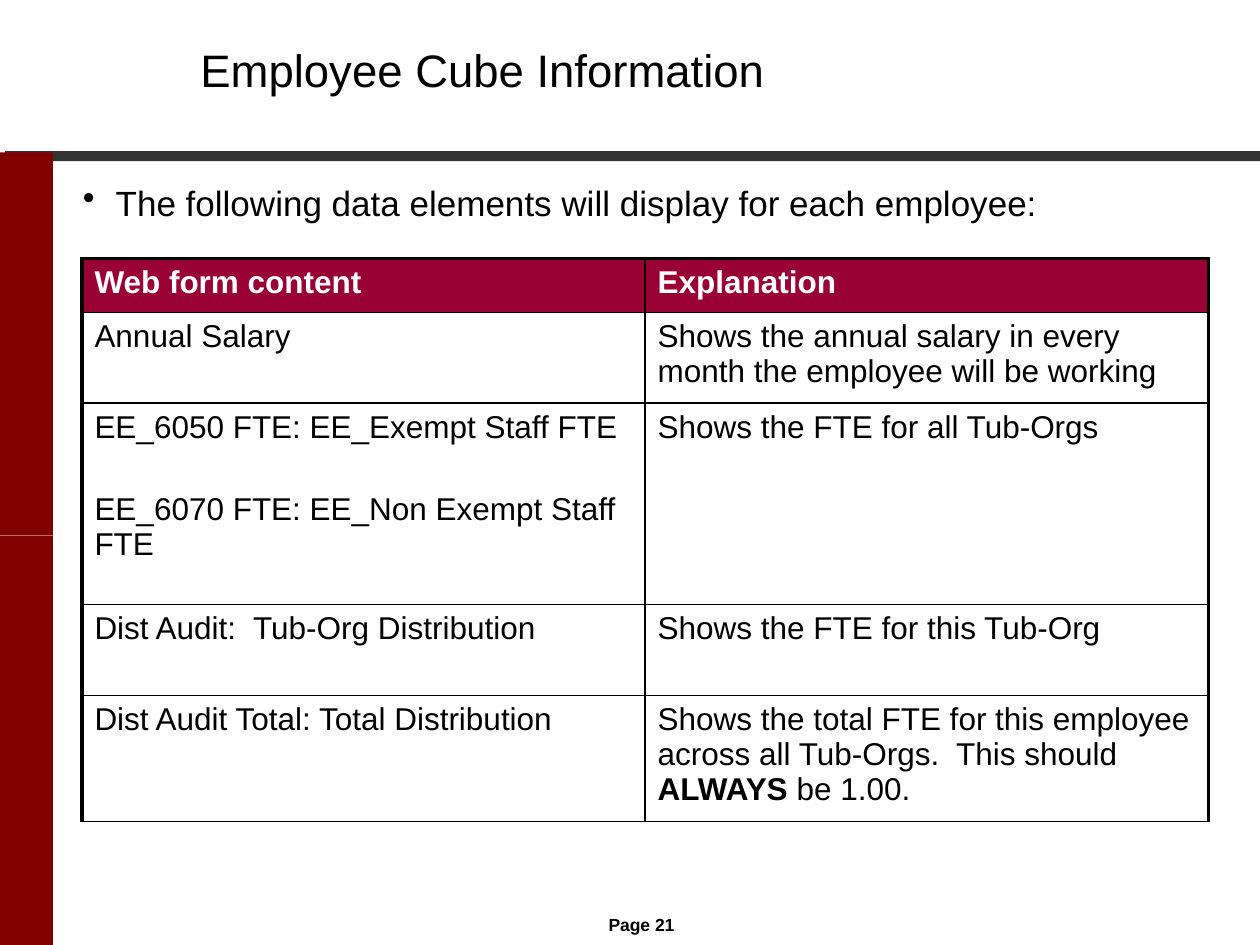
from lxml import etree
from pptx import Presentation
from pptx.dml.color import RGBColor
from pptx.enum.shapes import MSO_SHAPE
from pptx.enum.text import MSO_ANCHOR, MSO_AUTO_SIZE, PP_ALIGN
from pptx.oxml.ns import qn
from pptx.util import Inches, Pt

RECT = MSO_SHAPE.RECTANGLE
MIDDLE = MSO_ANCHOR.MIDDLE
NO_FIT = MSO_AUTO_SIZE.NONE
LEFT = PP_ALIGN.LEFT
FONT = "Arial"
COLORS = {
    "text": "000000",
    "header_text": "FFFFFF",
    "header": "990033",
    "rule": "333333",
    "sidebar": "800000",
    "border": "000000",
}
OUTER, INNER = 2.25, 1
COLUMN_WIDTH = 4.47
ROW_HEIGHTS = [0.43, 0.72, 1.6, 0.72, 0.94]
PARAGRAPH_GAP = 27
ROWS = [
    ("Web form content", "Explanation"),
    ("Annual Salary",
     "Shows the annual salary in every month the employee will be working"),
    ("EE_6050 FTE: EE_Exempt Staff FTE\nEE_6070 FTE: EE_Non Exempt Staff FTE",
     "Shows the FTE for all Tub-Orgs"),
    ("Dist Audit:  Tub-Org Distribution", "Shows the FTE for this Tub-Org"),
    ("Dist Audit Total: Total Distribution",
     "Shows the total FTE for this employee across all Tub-Orgs.  "
     "This should **ALWAYS** be 1.00."),
]


def color(name):
    """Return the named colour."""
    return RGBColor.from_string(COLORS[name])


def add_run(p, text, size, name="text", bold=False):
    """Append a formatted run to a paragraph."""
    r = p.add_run()
    r.text = text
    r.font.name = FONT
    r.font.size = Pt(size)
    r.font.bold = bold
    r.font.color.rgb = color(name)


def add_title(s, text):
    """Place and format the title placeholder."""
    sp = s.shapes.title
    sp.left, sp.top = Inches(1.49), Inches(0)
    sp.width, sp.height = Inches(8.42), Inches(1.14)
    tf = sp.text_frame
    tf.auto_size = NO_FIT
    tf.vertical_anchor = MIDDLE
    p = tf.paragraphs[0]
    p.alignment = LEFT
    p.line_spacing = Pt(28)
    add_run(p, text, 26)


def add_bar(s, left, top, width, height, name):
    """Add a plain filled rectangle."""
    sp = s.shapes.add_shape(RECT, Inches(left), Inches(top), Inches(width), Inches(height))
    sp.shadow.inherit = False
    sp.fill.solid()
    sp.fill.fore_color.rgb = color(name)
    sp.line.fill.background()


def add_text_box(s, left, top, width, height):
    """Add a wrapping text box and return its text frame."""
    tf = s.shapes.add_textbox(
        Inches(left), Inches(top), Inches(width), Inches(height)).text_frame
    tf.word_wrap = True
    return tf


def add_bullet(s, text):
    """Add the bulleted lead-in line."""
    p = add_text_box(s, 0.56, 1.39, 9.21, 0.66).paragraphs[0]
    pPr = p._p.get_or_add_pPr()
    pPr.set("marL", str(Inches(0.26)))
    pPr.set("indent", str(-Inches(0.26)))
    etree.SubElement(pPr, qn("a:buChar"), char="•")
    add_run(p, text, 20)


def add_page_number(s, text):
    """Add the page label at the foot of the slide."""
    tf = add_text_box(s, 4.83, 7.22, 0.8, 0.2)
    tf.margin_left = tf.margin_right = tf.margin_top = tf.margin_bottom = 0
    p = tf.paragraphs[0]
    p.line_spacing = 1.2
    add_run(p, text, 10, bold=True)


def set_borders(cell, widths):
    """Draw the left, right, top and bottom borders of a cell."""
    tcPr = cell._tc.get_or_add_tcPr()
    for i, (side, width) in enumerate(zip("LRTB", widths)):
        ln = etree.Element(qn(f"a:ln{side}"), w=str(Pt(width)))
        fill = etree.SubElement(ln, qn("a:solidFill"))
        etree.SubElement(fill, qn("a:srgbClr"), val=COLORS["border"])
        tcPr.insert(i, ln)


def fill_cell(cell, text, header):
    """Write a cell, with bold text between double asterisks."""
    name = "header_text" if header else "text"
    tf = cell.text_frame
    for i, line in enumerate(text.split("\n")):
        p = tf.add_paragraph() if i else tf.paragraphs[0]
        if i:
            p.space_before = Pt(PARAGRAPH_GAP)
        for j, part in enumerate(line.split("**")):
            add_run(p, part, 18, name, header or j % 2 == 1)
    if header:
        cell.fill.solid()
        cell.fill.fore_color.rgb = color("header")
    else:
        cell.fill.background()


def add_data_table(s):
    """Add the table of data elements."""
    table = s.shapes.add_table(
        len(ROWS), 2, Inches(0.65), Inches(2.05),
        Inches(2 * COLUMN_WIDTH), Inches(sum(ROW_HEIGHTS))).table
    table.horz_banding = False
    for column in table.columns:
        column.width = Inches(COLUMN_WIDTH)
    for i, (texts, height) in enumerate(zip(ROWS, ROW_HEIGHTS)):
        table.rows[i].height = Inches(height)
        for j, text in enumerate(texts):
            cell = table.cell(i, j)
            fill_cell(cell, text, header=i == 0)
            set_borders(cell, (INNER if j else OUTER, OUTER if j else INNER,
                               INNER if i else OUTER, INNER))


def main():
    """Build and save the slide."""
    prs = Presentation()
    prs.slide_width, prs.slide_height = Inches(10), Inches(7.5)
    s = prs.slides.add_slide(prs.slide_layouts[5])
    add_page_number(s, "Page 21")
    add_bar(s, 0.04, 1.2, 9.96, 0.08, "rule")
    add_bar(s, 0, 4.25, 0.42, 3.25, "sidebar")
    add_bar(s, 0, 1.21, 0.42, 3.04, "sidebar")
    add_title(s, "Employee Cube Information")
    add_bullet(s, "The following data elements will display for each employee:")
    add_data_table(s)
    prs.save("out.pptx")


if __name__ == "__main__":
    main()
